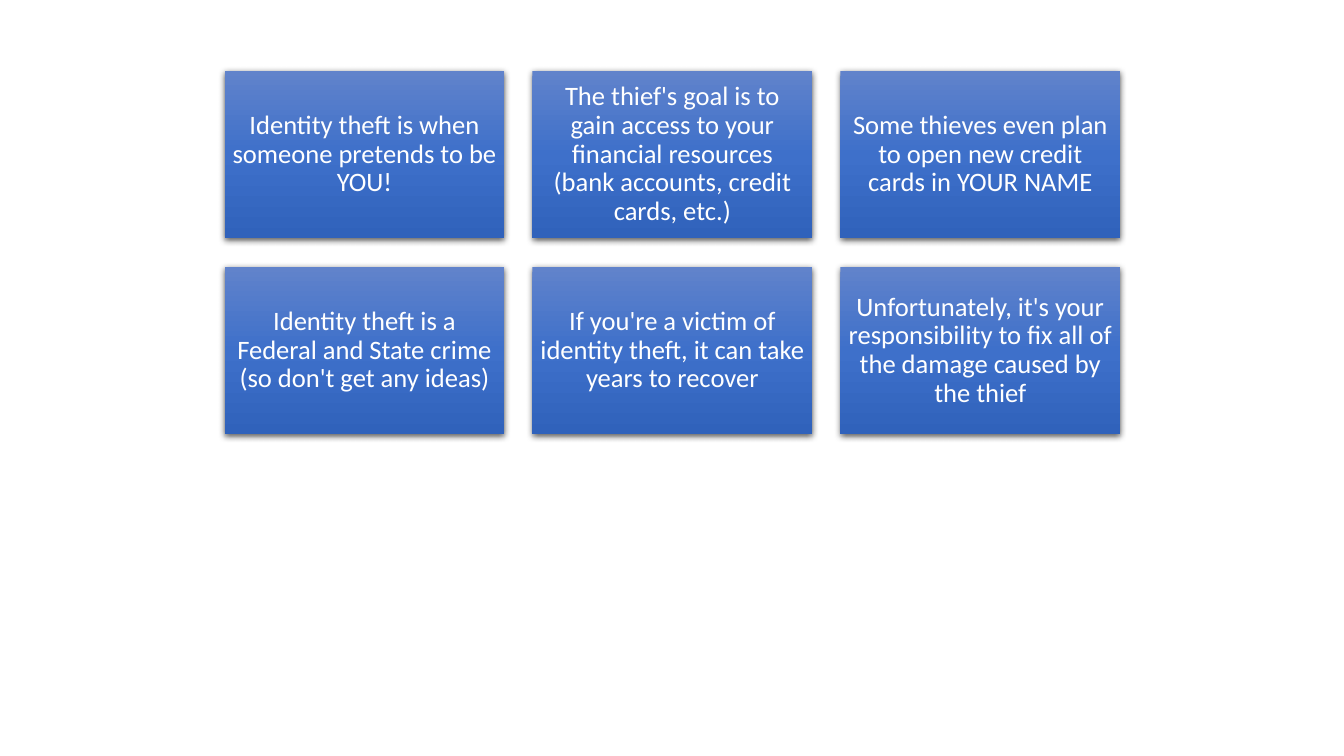
"""Build a slide with six identity theft facts in a grid of cards."""
from copy import deepcopy
from dataclasses import dataclass

from lxml import etree
from pptx import Presentation
from pptx import util as u
from pptx.dml.color import RGBColor
from pptx.enum import shapes, text
from pptx.oxml.ns import qn
from pptx.shapes.autoshape import Shape
from pptx.slide import Slide

COLOURS = {
    "top": "6183CB",
    "middle": "3E70CA",
    "bottom": "3062BB",
    "text": "FFFFFF",
    "shadow": "000000",
}
GRADIENT = (("top", 0.0), ("middle", 0.5), ("bottom", 1.0))
COLUMNS = 3
LEFT, TOP = 5.66, 1.78
WIDTH, HEIGHT, GAP = 7.05, 4.23, 0.71
INSET = 0.2

FACTS = (
    "Identity theft is when someone pretends to be YOU!",
    "The thief's goal is to gain access to your financial resources (bank accounts, credit cards, etc.)",
    "Some thieves even plan to open new credit cards in YOUR NAME",
    "Identity theft is a Federal and State crime (so don't get any ideas)",
    "If you're a victim of identity theft, it can take years to recover",
    "Unfortunately, it's your responsibility to fix all of the damage caused by the thief",
)


@dataclass(frozen=True)
class FactCard:
    wording: str
    column: int
    row: int

    @property
    def left(self) -> float:
        return LEFT + self.column * (WIDTH + GAP)

    @property
    def top(self) -> float:
        return TOP + self.row * (HEIGHT + GAP)


def shade(card: Shape) -> None:
    card.fill.gradient()
    card.fill.gradient_angle = 270
    stops = card._element.spPr.find(qn("a:gradFill")).find(qn("a:gsLst"))
    stops.insert(1, deepcopy(stops[0]))
    for stop, (part, position) in zip(card.fill.gradient_stops, GRADIENT):
        stop.color.rgb = RGBColor.from_string(COLOURS[part])
        stop.position = position


def cast_shadow(card: Shape) -> None:
    card.shadow.inherit = False
    effects = card._element.spPr.find(qn("a:effectLst"))
    shadow = etree.SubElement(
        effects, qn("a:outerShdw"), blurRad=str(u.Pt(4.5)), dist=str(u.Pt(1.5)),
        dir="5400000", algn="ctr", rotWithShape="0",
    )
    colour = etree.SubElement(shadow, qn("a:srgbClr"), val=COLOURS["shadow"])
    etree.SubElement(colour, qn("a:alpha"), val="63000")


def write(card: Shape, wording: str) -> None:
    frame = card.text_frame
    frame.word_wrap = True
    frame.vertical_anchor = text.MSO_ANCHOR.MIDDLE
    frame.margin_left = frame.margin_right = u.Cm(INSET)
    frame.margin_top = frame.margin_bottom = u.Cm(INSET)
    sentence = frame.paragraphs[0]
    sentence.alignment = text.PP_ALIGN.CENTER
    sentence.line_spacing = 0.9
    run = sentence.add_run()
    run.text = wording
    run.font.name = "Calibri"
    run.font.size = u.Pt(19)
    run.font.color.rgb = RGBColor.from_string(COLOURS["text"])


def draw_fact(slide: Slide, fact: FactCard) -> None:
    card = slide.shapes.add_shape(
        shapes.MSO_SHAPE.RECTANGLE,
        u.Cm(fact.left), u.Cm(fact.top), u.Cm(WIDTH), u.Cm(HEIGHT),
    )
    shade(card)
    card.line.fill.background()
    cast_shadow(card)
    write(card, fact.wording)


def main() -> None:
    deck = Presentation()
    deck.slide_width, deck.slide_height = u.Cm(33.87), u.Cm(19.05)
    slide = deck.slides.add_slide(deck.slide_layouts[6])
    for index, wording in enumerate(FACTS):
        row, column = divmod(index, COLUMNS)
        draw_fact(slide, FactCard(wording, column, row))
    deck.save("out.pptx")


if __name__ == "__main__":
    main()
